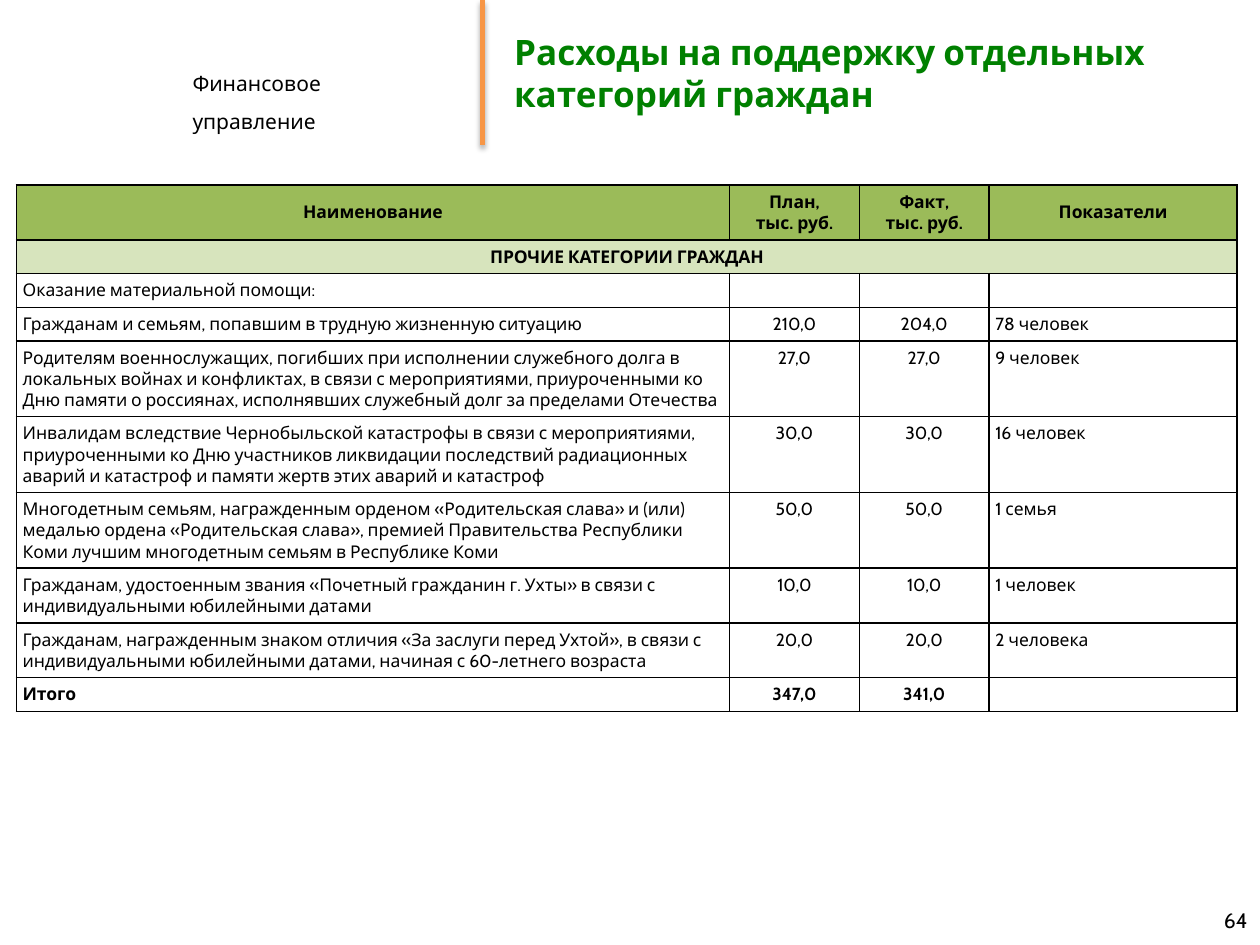
from dataclasses import dataclass

import pptx
import pptx.dml.color
import pptx.enum.shapes
import pptx.enum.text
import pptx.oxml
import pptx.oxml.ns
import pptx.util

Inches = pptx.util.Inches
Pt = pptx.util.Pt
Align = pptx.enum.text.PP_ALIGN
Anchor = pptx.enum.text.MSO_ANCHOR

FONT = "Cabin"
BLACK, GREEN, ORANGE = "000000", "008000", "F79646"
HEADER_FILL, SECTION_FILL = "9BBB59", "D7E4BD"
COLUMN_WIDTHS = (5.66, 1.03, 1.03, 1.97)
ONE_LINE, TWO_LINES, THREE_LINES = 0.26, 0.43, 0.6


@dataclass
class Expense:
    name: str
    plan: str = ""
    fact: str = ""
    indicator: str = ""
    height: float = ONE_LINE
    fill: str | None = None
    bold: bool = False
    merged: bool = False

    @property
    def heading(self) -> bool:
        return self.fill is not None


EXPENSES = [
    Expense("Наименование", "План,\nтыс. руб.", "Факт,\nтыс. руб.", "Показатели",
            TWO_LINES, HEADER_FILL, bold=True),
    Expense("ПРОЧИЕ КАТЕГОРИИ ГРАЖДАН", fill=SECTION_FILL, bold=True, merged=True),
    Expense("Оказание материальной помощи:"),
    Expense("Гражданам и семьям, попавшим в трудную жизненную ситуацию",
            "210,0", "204,0", "78 человек"),
    Expense("Родителям военнослужащих, погибших при исполнении служебного долга в "
            "локальных войнах и конфликтах, в связи с мероприятиями, приуроченными ко "
            "Дню памяти о россиянах, исполнявших служебный долг за пределами Отечества",
            "27,0", "27,0", "9 человек", THREE_LINES),
    Expense("Инвалидам вследствие Чернобыльской катастрофы в связи с мероприятиями, "
            "приуроченными ко Дню участников ликвидации последствий радиационных "
            "аварий и катастроф и памяти жертв этих аварий и катастроф",
            "30,0", "30,0", "16 человек", THREE_LINES),
    Expense("Многодетным семьям, награжденным орденом «Родительская слава» и (или) "
            "медалью ордена «Родительская слава», премией Правительства Республики "
            "Коми лучшим многодетным семьям в Республике Коми",
            "50,0", "50,0", "1 семья", THREE_LINES),
    Expense("Гражданам, удостоенным звания «Почетный гражданин г. Ухты» в связи с "
            "индивидуальными юбилейными датами",
            "10,0", "10,0", "1 человек", TWO_LINES),
    Expense("Гражданам, награжденным знаком отличия «За заслуги перед Ухтой», в связи с "
            "индивидуальными юбилейными датами, начиная с 60-летнего возраста",
            "20,0", "20,0", "2 человека", TWO_LINES),
    Expense("Итого", "347,0", "341,0", bold=True),
]


def rgb(hex_color: str):
    return pptx.dml.color.RGBColor.from_string(hex_color)


def xml(markup: str):
    return pptx.oxml.parse_xml(
        markup.replace(">", f" {pptx.oxml.ns.nsdecls('a')}>", 1))


def write(frame, text: str, *, size: float = 12, color: str = BLACK, bold: bool = False,
          align=Align.LEFT, line_spacing: float | None = None) -> None:
    """Fill a text frame; newlines start paragraphs, vertical tabs break lines."""
    frame.text = text
    for paragraph in frame.paragraphs:
        paragraph.alignment = align
        if line_spacing:
            paragraph.line_spacing = line_spacing
        for run in paragraph.runs:
            run.font.name = FONT
            run.font.size = Pt(size)
            run.font.bold = bold
            run.font.color.rgb = rgb(color)
        if not paragraph.runs:
            paragraph._p.append(xml(f'<a:endParaRPr sz="{size * 100}"></a:endParaRPr>'))


def add_label(slide, text: str, box: tuple, *, anchor=Anchor.TOP, **text_format) -> None:
    frame = slide.shapes.add_textbox(*map(Inches, box)).text_frame
    frame.word_wrap = True
    frame.vertical_anchor = anchor
    write(frame, text, **text_format)


def add_title(slide, text: str) -> None:
    title = slide.shapes.title
    title.left, title.top, title.width, title.height = map(Inches, (3.98, 0, 6.02, 1.15))
    title.text_frame.auto_size = pptx.enum.text.MSO_AUTO_SIZE.NONE
    title.text_frame.vertical_anchor = Anchor.MIDDLE
    write(title.text_frame, text, size=20, color=GREEN, bold=True)


def add_divider(slide) -> None:
    divider = slide.shapes.add_connector(
        pptx.enum.shapes.MSO_CONNECTOR.STRAIGHT,
        Inches(3.83), Inches(0), Inches(3.83), Inches(1.15))
    divider.line.color.rgb = rgb(ORANGE)
    divider.line.width = Pt(3)
    divider._element.spPr.append(xml(
        f'<a:effectLst><a:outerShdw blurRad="{Pt(3.1)}" dist="{Pt(1.8)}" dir="5400000" '
        f'rotWithShape="0"><a:srgbClr val="{BLACK}"><a:alpha val="35000"/></a:srgbClr>'
        '</a:outerShdw></a:effectLst>'))


def format_cell(cell, expense: Expense, text: str, align) -> None:
    cell.margin_left = cell.margin_right = Inches(0.05)
    cell.margin_top = cell.margin_bottom = Inches(0.05)
    cell.vertical_anchor = Anchor.MIDDLE if expense.heading else Anchor.TOP
    properties = cell._tc.get_or_add_tcPr()
    for side in "LRTB":
        properties.append(xml(
            f'<a:ln{side} w="{Pt(1)}"><a:solidFill><a:srgbClr val="{BLACK}"/>'
            f'</a:solidFill></a:ln{side}>'))
    if expense.heading:
        cell.fill.solid()
        cell.fill.fore_color.rgb = rgb(expense.fill)
    else:
        cell.fill.background()
    write(cell.text_frame, text, size=10, bold=expense.bold, align=align)


def add_expense_table(slide) -> None:
    table = slide.shapes.add_table(
        len(EXPENSES), len(COLUMN_WIDTHS), Inches(0.13), Inches(1.47),
        Inches(sum(COLUMN_WIDTHS)), Inches(sum(e.height for e in EXPENSES))).table
    table.first_row = table.horz_banding = False
    for column, width in zip(table.columns, COLUMN_WIDTHS):
        column.width = Inches(width)
    for index, expense in enumerate(EXPENSES):
        table.rows[index].height = Inches(expense.height)
        cells = list(table.rows[index].cells)
        texts = (expense.name, expense.plan, expense.fact, expense.indicator)
        for column, (cell, text) in enumerate(zip(cells, texts)):
            centred = expense.heading or column in (1, 2)
            format_cell(cell, expense, text, Align.CENTER if centred else Align.LEFT)
        if expense.merged:
            cells[0].merge(cells[-1])


def main() -> None:
    deck = pptx.Presentation()
    deck.slide_width, deck.slide_height = Inches(10), Inches(7.5)
    slide = deck.slides.add_slide(deck.slide_layouts.get_by_name("Title Only"))
    add_label(slide, "Финансовое\vуправление", (1.43, 0.41, 2.1, 0.7), line_spacing=1.5)
    add_divider(slide)
    add_title(slide, "Расходы на поддержку отдельных категорий граждан")
    add_label(slide, "64", (7.67, 7.1, 2.33, 0.4), anchor=Anchor.MIDDLE, align=Align.RIGHT)
    add_expense_table(slide)
    deck.save("out.pptx")


if __name__ == "__main__":
    main()
